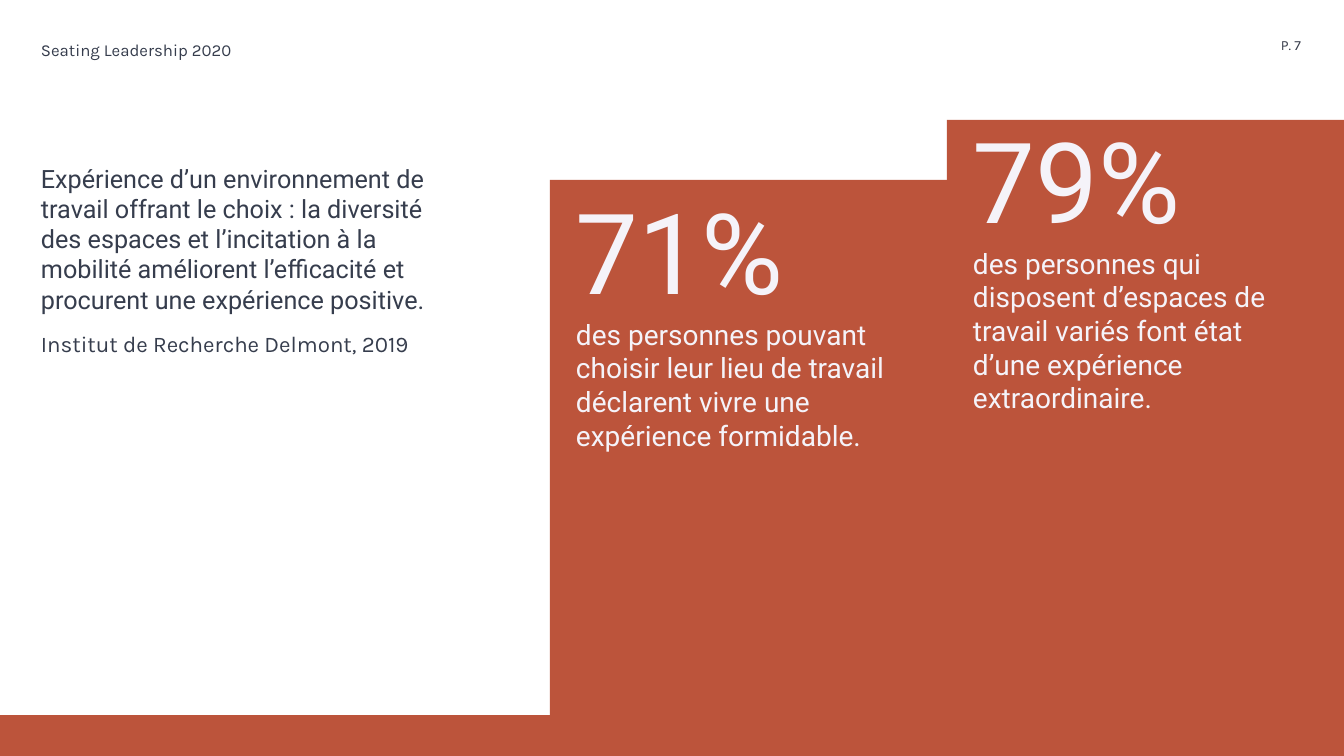
from pptx import Presentation
from pptx.dml.color import RGBColor as RGB
from pptx.enum.shapes import MSO_SHAPE as SHAPE
from pptx.util import Emu, Pt

PX = 914400 / 100.8
COLORS = {"ink": "363D4D", "page": "383D4B", "rust": "BC543B", "pale": "F5F3F9"}


def px(n):
    return Emu(round(n * PX))


def add_bar(slide, x, y, w, h):
    s = slide.shapes.add_shape(SHAPE.RECTANGLE, px(x), px(y), px(w), px(h))
    s.shadow.inherit = False
    s.fill.solid()
    s.fill.fore_color.rgb = RGB.from_string(COLORS["rust"])
    s.line.fill.background()


def add_text(slide, box, lines, font, color, inset=(0, 0)):
    tf = slide.shapes.add_textbox(*map(px, box)).text_frame
    tf.word_wrap = True
    tf.margin_left = tf.margin_right = px(inset[0])
    tf.margin_top = tf.margin_bottom = px(inset[1])
    for i, (text, size) in enumerate(lines):
        p = tf.add_paragraph() if i else tf.paragraphs[0]
        p.text = text
        p.font.name = font
        p.font.size = Pt(size)
        p.font.color.rgb = RGB.from_string(COLORS[color])


def add_stat(slide, x, bar_top, text_top, value, label):
    add_bar(slide, x, bar_top, 397, 756 - bar_top)
    add_text(slide, (x + 16, text_top, 345, 281), [(value, 80), (label, 20)],
             "Roboto", "pale", (10, 5))


def main():
    prs = Presentation()
    prs.slide_width, prs.slide_height = px(1344), px(756)
    slide = prs.slides.add_slide(prs.slide_layouts[6])

    add_text(slide, (41, 40, 401, 40), [("Seating Leadership 2020", 12)], "Karla", "ink")
    add_text(slide, (1271, 32, 64, 27), [("P. 7", 10)], "Karla", "page", (10, 5))
    add_text(slide, (41, 163, 387, 99), [(
        "Expérience d’un environnement de travail offrant le choix : la diversité "
        "des espaces et l’incitation à la mobilité améliorent l’efficacité et "
        "procurent une expérience positive.", 18)], "Roboto", "ink")
    add_text(slide, (41, 330, 401, 183),
             [("Institut de Recherche Delmont, 2019", 16)], "Karla", "ink")

    add_stat(slide, 947, 120, 107, "79%",
             "des personnes qui disposent d’espaces de travail variés font état "
             "d’une expérience extraordinaire.")
    add_stat(slide, 550, 180, 178, "71%",
             "des personnes pouvant choisir leur lieu de travail déclarent vivre "
             "une expérience formidable.")
    add_bar(slide, 0, 715, 1344, 41)
    prs.save("out.pptx")


if __name__ == "__main__":
    main()
